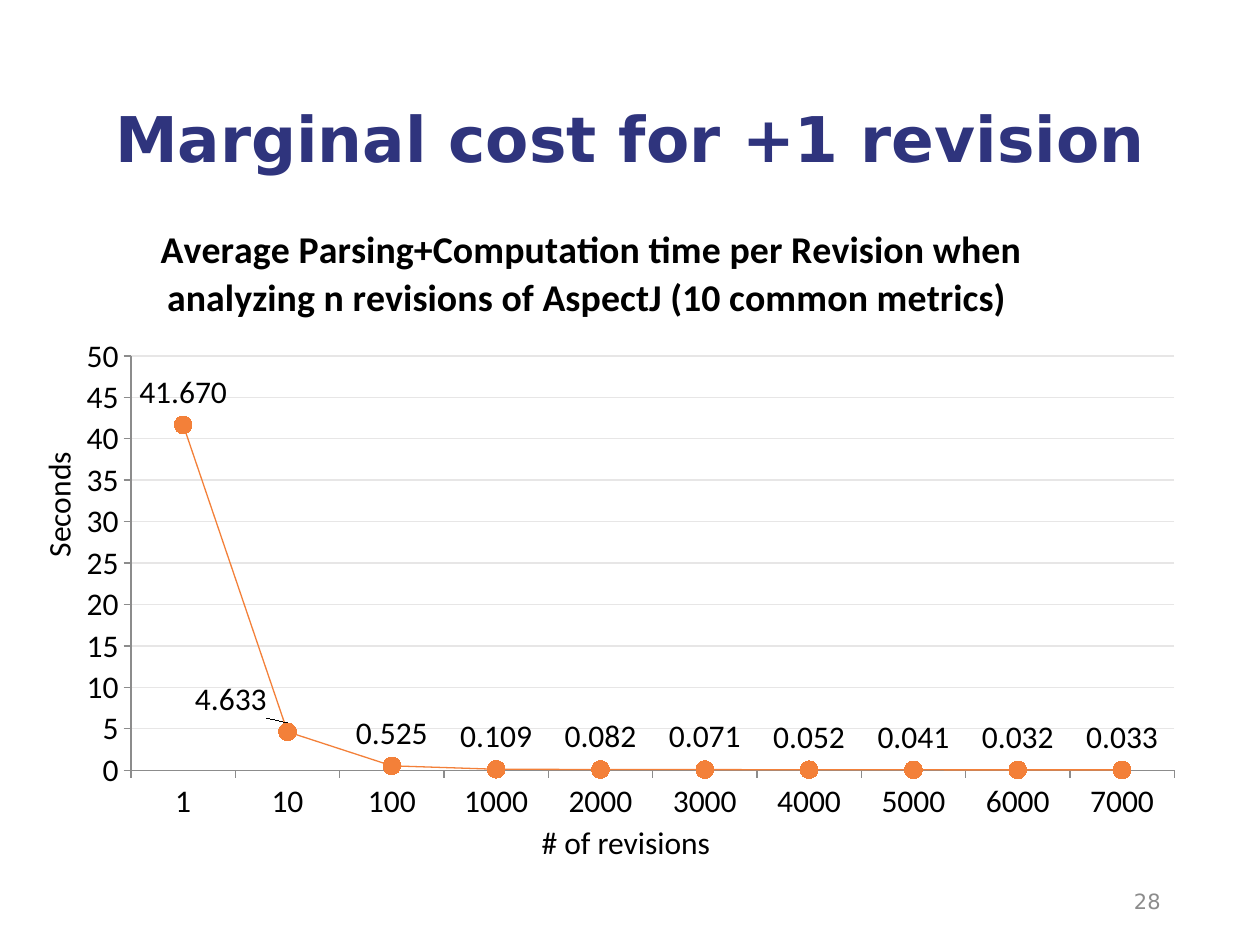
from lxml import etree
from pptx import Presentation
from pptx.chart.data import CategoryChartData
from pptx.dml.color import RGBColor
from pptx.enum.chart import XL_CHART_TYPE, XL_LABEL_POSITION, XL_MARKER_STYLE, XL_TICK_MARK
from pptx.enum.text import MSO_ANCHOR, PP_ALIGN
from pptx.oxml.ns import qn
from pptx.util import Emu, Pt

LINE_MARKERS = XL_CHART_TYPE.LINE_MARKERS
ABOVE = XL_LABEL_POSITION.ABOVE
CIRCLE = XL_MARKER_STYLE.CIRCLE
OUTSIDE = XL_TICK_MARK.OUTSIDE
MIDDLE = MSO_ANCHOR.MIDDLE
LEFT, CENTER, RIGHT = PP_ALIGN.LEFT, PP_ALIGN.CENTER, PP_ALIGN.RIGHT

NAVY = RGBColor(0x2F, 0x34, 0x7D)
ORANGE = RGBColor(0xF3, 0x80, 0x39)
BLACK = RGBColor(0, 0, 0)
GRAY = RGBColor(0x8C, 0x8C, 0x8C)
GRID_GRAY = RGBColor(0xE7, 0xE6, 0xE6)
HEADING_FONT, CHART_FONT = "DejaVu Sans", "Calibri"

EMU_PER_PX = 914400 // 100
REVISIONS = ["1", "10", "100", "1000", "2000", "3000", "4000", "5000", "6000", "7000"]
SECONDS = [41.67, 4.633, 0.525, 0.109, 0.082, 0.071, 0.052, 0.041, 0.032, 0.033]
CHART_TITLE = (
    "Average Parsing+Computation time per Revision when "
    "analyzing n revisions of AspectJ (10 common metrics) "
)


def px(*lengths):
    """Turn pixel lengths into EMU."""
    return [Emu(length * EMU_PER_PX) for length in lengths]


def style_font(font, name, size, color, bold=False):
    """Set the face, size, colour and weight of a font."""
    font.name, font.size, font.bold = name, Pt(size), bold
    font.color.rgb = color


def style_line(line, color, width=0.75):
    """Set the colour and width of a line."""
    line.color.rgb, line.width = color, Pt(width)


def manual_layout(**values):
    """Return a chart layout element with the given settings."""
    layout = etree.Element(qn("c:layout"))
    manual = etree.SubElement(layout, qn("c:manualLayout"))
    for tag, value in values.items():
        etree.SubElement(manual, qn(f"c:{tag}")).set("val", str(value))
    return layout


def add_title(slide, text):
    """Fill the title placeholder."""
    title = slide.shapes.title
    title.left, title.top, title.width, title.height = px(69, 40, 862, 145)
    title.text_frame.text = text
    title.text_frame.vertical_anchor = MIDDLE
    paragraph = title.text_frame.paragraphs[0]
    paragraph.alignment, paragraph.line_spacing = CENTER, 0.9
    style_font(paragraph.runs[0].font, HEADING_FONT, 36, NAVY, bold=True)


def add_label(slide, text, box, font=CHART_FONT, size=18, color=BLACK,
              align=LEFT, wrap=False, rotation=0):
    """Add a one-line text box."""
    label = slide.shapes.add_textbox(*px(*box))
    label.rotation = rotation
    frame = label.text_frame
    frame.text, frame.word_wrap, frame.vertical_anchor = text, wrap, MIDDLE
    paragraph = frame.paragraphs[0]
    paragraph.alignment = align
    style_font(paragraph.runs[0].font, font, size, color)


def style_chart_title(chart):
    """Write and place the chart heading."""
    heading = chart.chart_title
    heading.text_frame.text = CHART_TITLE
    style_font(heading.text_frame.paragraphs[0].runs[0].font, CHART_FONT, 21.6, BLACK, bold=True)
    chart_space = chart.element if hasattr(chart, "element") else chart._chartSpace
    title = chart_space.find(".//" + qn("c:title"))
    for layout in title.findall(qn("c:layout")):
        title.remove(layout)
    title.find(qn("c:tx")).addnext(
        manual_layout(xMode="edge", yMode="edge", x=0.08, y=0.03))
    plot_area = chart_space.find(".//" + qn("c:plotArea"))
    for layout in plot_area.findall(qn("c:layout")):
        plot_area.remove(layout)
    plot_area.insert(0, manual_layout(
        layoutTarget="inner", xMode="edge", yMode="edge", x=0.06, y=0.25, w=0.92, h=0.65))


def style_axes(chart):
    """Set the scale, ticks and lines of both axes."""
    for axis in (chart.category_axis, chart.value_axis):
        axis.major_tick_mark = OUTSIDE
        style_line(axis.format.line, GRAY)
        style_font(axis.tick_labels.font, CHART_FONT, 18, BLACK)
    seconds = chart.value_axis
    seconds.minimum_scale, seconds.maximum_scale, seconds.major_unit = 0, 50, 5
    seconds.tick_labels.number_format = "0"
    seconds.tick_labels.number_format_is_linked = False
    style_line(seconds.major_gridlines.format.line, GRID_GRAY)


def style_series(plot):
    """Format the cost curve, its markers and its value labels."""
    plot.vary_by_categories = False
    cost = plot.series[0]
    cost.smooth = False
    style_line(cost.format.line, ORANGE)
    cost.marker.style, cost.marker.size = CIRCLE, 10
    cost.marker.format.fill.solid()
    cost.marker.format.fill.fore_color.rgb = ORANGE
    style_line(cost.marker.format.line, ORANGE)
    labels = cost.data_labels
    labels.show_value, labels.position = True, ABOVE
    labels.number_format, labels.number_format_is_linked = "#,##0.000", False
    style_font(labels.font, CHART_FONT, 18, BLACK)
    shifted_label = cost.points[1].data_label
    shifted_label.position = ABOVE
    style_font(shifted_label.font, CHART_FONT, 18, BLACK)
    index = labels._element.find(qn("c:dLbl")).find(qn("c:idx"))
    index.addnext(manual_layout(x=-0.05, y=0))


def add_cost_chart(slide):
    """Add the line chart of seconds per revision."""
    data = CategoryChartData()
    data.categories = REVISIONS
    data.add_series("Series 1", SECONDS)
    chart = slide.shapes.add_chart(LINE_MARKERS, *px(50, 156, 900, 506), data).chart
    chart.has_legend = False
    style_font(chart.font, CHART_FONT, 18, BLACK)
    style_chart_title(chart)
    style_axes(chart)
    style_series(chart.plots[0])


def main():
    """Build and save the slide."""
    deck = Presentation()
    deck.slide_width, deck.slide_height = px(1000, 750)
    slide = deck.slides.add_slide(deck.slide_layouts[5])
    add_title(slide, "Marginal cost for +1 revision")
    add_cost_chart(slide)
    add_label(slide, "Seconds", (-8, 378, 108, 40), rotation=270)
    add_label(slide, "# of revisions", (420, 648, 160, 40))
    add_label(slide, "28", (706, 695, 225, 40), HEADING_FONT, 12, GRAY, RIGHT, wrap=True)
    deck.save("out.pptx")


if __name__ == "__main__":
    main()
